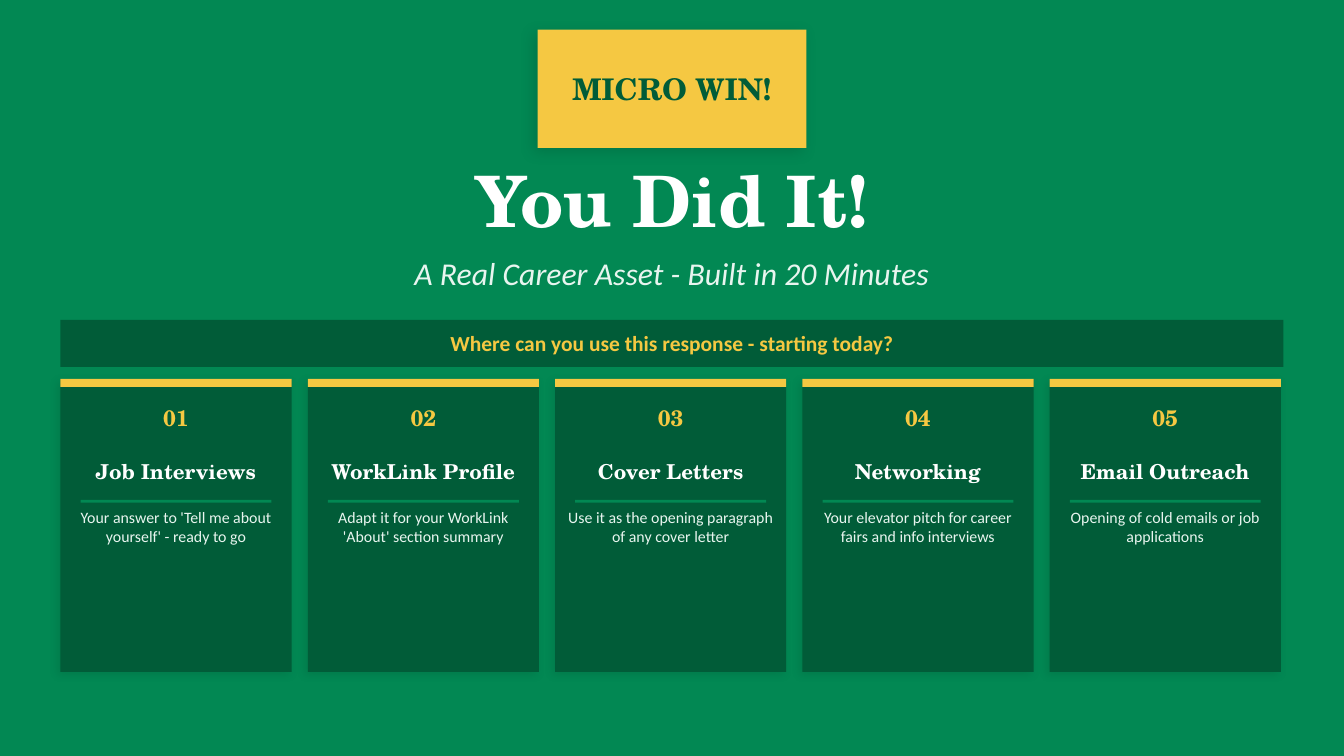
import dataclasses

import pptx
import pptx.dml.color
import pptx.enum.shapes
import pptx.enum.text
import pptx.oxml
import pptx.oxml.ns
import pptx.util

COLS, ROWS = 100, 56.25
CELL = pptx.util.Inches(10) / COLS


@dataclasses.dataclass(frozen=True)
class Theme:
    """Colours, typefaces and type sizes of the slide."""
    green: str = "028853"
    dark: str = "015C38"
    gold: str = "F5C842"
    white: str = "FFFFFF"
    mint: str = "E8F5EF"
    serif: str = "TeX Gyre Schola"
    sans: str = "Calibri"
    badge: float = 16
    title: float = 38
    lead: float = 17
    prompt: float = 11.5
    number: float = 12
    name: float = 11
    body: float = 8.5


@dataclasses.dataclass(frozen=True)
class Box:
    """An area of the slide, measured in grid columns and rows."""
    x: float
    y: float
    w: float
    h: float

    def area(self, x, y, w, h):
        """Return an area placed relative to this one."""
        return Box(self.x + x, self.y + y, w, h)

    def inset(self, x, y, h):
        """Return an area x columns in from both sides."""
        return self.area(x, y, self.w - 2 * x, h)

    def emu(self):
        """Return left, top, width and height as lengths."""
        return [pptx.util.Emu(round(n * CELL)) for n in (self.x, self.y, self.w, self.h)]


THEME = Theme()
CARDS = [
    ("Job Interviews", "Your answer to 'Tell me about yourself' - ready to go"),
    ("WorkLink Profile", "Adapt it for your WorkLink 'About' section summary"),
    ("Cover Letters", "Use it as the opening paragraph of any cover letter"),
    ("Networking", "Your elevator pitch for career fairs and info interviews"),
    ("Email Outreach", "Opening of cold emails or job applications"),
]


def tint(hue):
    """Turn a hex string into a colour."""
    return pptx.dml.color.RGBColor.from_string(hue)


def shade(shape, alpha, blur, dist):
    """Give a shape a soft black shadow towards the lower left."""
    blur, dist = pptx.util.Pt(blur), pptx.util.Pt(dist)
    glow = pptx.oxml.parse_xml(
        f'<a:outerShdw {pptx.oxml.ns.nsdecls("a")} blurRad="{blur}" dist="{dist}" '
        f'dir="{135 * 60000}" algn="bl" rotWithShape="0"><a:srgbClr val="000000">'
        f'<a:alpha val="{alpha * 1000}"/></a:srgbClr></a:outerShdw>')
    shape._element.spPr.find(pptx.oxml.ns.qn("a:effectLst")).append(glow)


def block(slide, box, hue, shadow=None):
    """Draw a plain filled rectangle."""
    shape = slide.shapes.add_shape(pptx.enum.shapes.MSO_SHAPE.RECTANGLE, *box.emu())
    shape.shadow.inherit = False
    shape.fill.solid()
    shape.fill.fore_color.rgb = tint(hue)
    shape.line.fill.background()
    if shadow:
        shade(shape, *shadow)


def label(slide, box, text, face, size, hue, bold=False, slant=False, top=False):
    """Write one centred line or paragraph."""
    frame = slide.shapes.add_textbox(*box.emu()).text_frame
    frame.word_wrap = True
    frame.margin_left = frame.margin_right = frame.margin_top = frame.margin_bottom = 0
    anchor = pptx.enum.text.MSO_ANCHOR
    frame.vertical_anchor = anchor.TOP if top else anchor.MIDDLE
    para = frame.paragraphs[0]
    para.alignment = pptx.enum.text.PP_ALIGN.CENTER
    run = para.add_run()
    run.text = text
    font = run.font
    font.name, font.size, font.bold, font.italic = face, pptx.util.Pt(size), bold, slant
    font.color.rgb = tint(hue)


def header(slide, box):
    """Place the badge, the title and the line below it."""
    t = THEME
    badge = box.inset(35, 0, 8.8)
    block(slide, badge, t.gold, (13, 8, 3))
    label(slide, badge, "MICRO WIN!", t.serif, t.badge, t.dark, bold=True)
    label(slide, box.inset(0, 9.6, 6), "You Did It!", t.serif, t.title, t.white, bold=True)
    label(slide, box.inset(0, 16, 4.2), "A Real Career Asset - Built in 20 Minutes",
          t.sans, t.lead, t.mint, slant=True)


def prompt(slide, box):
    """Place the band that asks the question."""
    block(slide, box, THEME.dark)
    label(slide, box.inset(1, 0, box.h), "Where can you use this response - starting today?",
          THEME.sans, THEME.prompt, THEME.gold, bold=True)


def card(slide, box, index, name, body):
    """Place one numbered card."""
    t = THEME
    block(slide, box, t.dark, (10, 5, 2))
    block(slide, box.inset(0, 0, 0.6), t.gold)
    label(slide, box.inset(0, 1.1, 3.5), f"{index:02}", t.serif, t.number, t.gold, bold=True)
    label(slide, box.inset(0.6, 5, 3.8), name, t.serif, t.name, t.white, bold=True)
    block(slide, box.inset(1.5, 9, 0.2), t.green)
    label(slide, box.inset(0.6, 9.6, 11), body, t.sans, t.body, t.mint, top=True)


def deck(slide, box, width=17.2, gap=1.2):
    """Place the row of cards at equal gaps."""
    for i, (name, body) in enumerate(CARDS):
        card(slide, box.area(i * (width + gap), 0, width, box.h), i + 1, name, body)


def main():
    """Build and save the slide."""
    show = pptx.Presentation()
    show.slide_width = round(COLS * CELL)
    show.slide_height = round(ROWS * CELL)
    slide = show.slides.add_slide(show.slide_layouts[6])
    slide.background.fill.solid()
    slide.background.fill.fore_color.rgb = tint(THEME.green)
    page = Box(0, 0, COLS, ROWS)
    header(slide, page.inset(5, 2.2, 20.2))
    prompt(slide, page.inset(4.5, 23.8, 3.5))
    deck(slide, page.inset(4.5, 28.2, 21.8))
    show.save("out.pptx")


if __name__ == "__main__":
    main()
